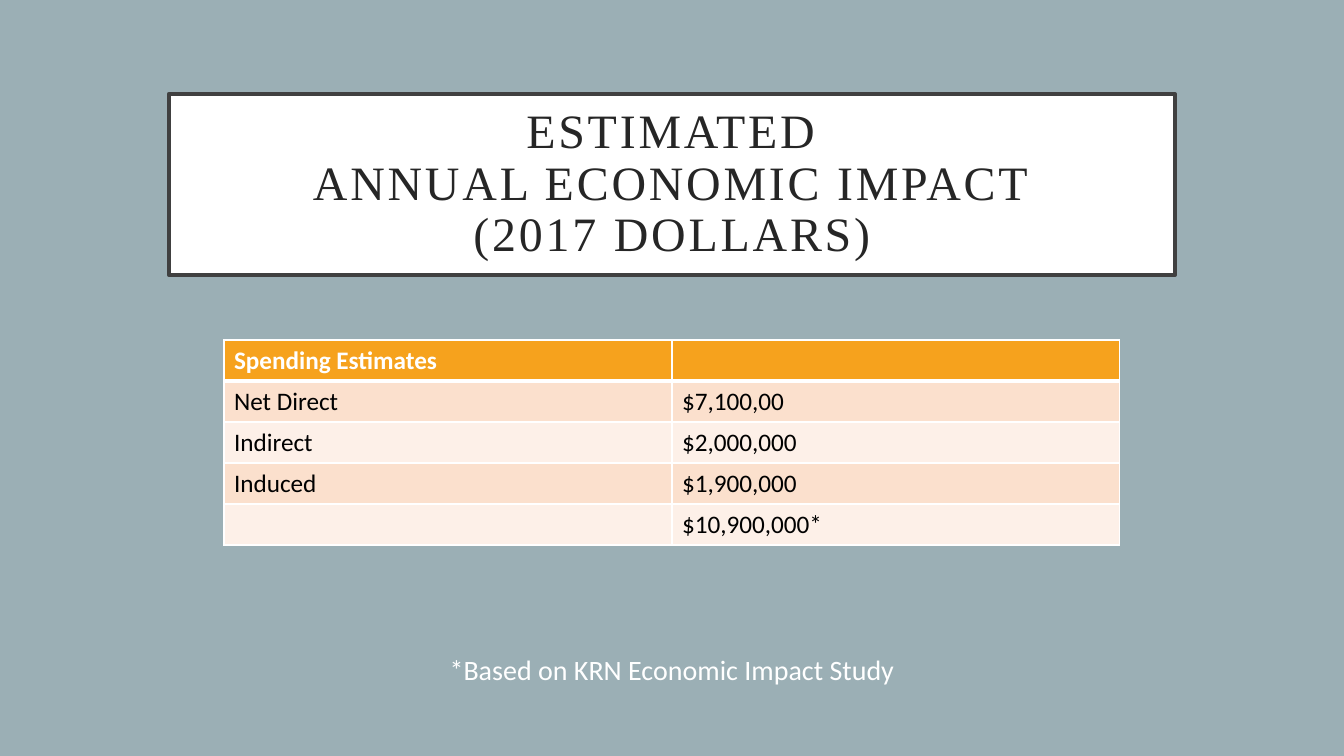
from lxml import etree
from pptx import Presentation
from pptx.dml.color import RGBColor
from pptx.enum.shapes import MSO_SHAPE as SHAPE
from pptx.enum.text import MSO_ANCHOR as ANCHOR, PP_ALIGN as ALIGN
from pptx.oxml.ns import qn
from pptx.util import Pt

PX = 914400 / 100.8
BACKGROUND = RGBColor(0x9B, 0xAF, 0xB5)
WHITE = RGBColor(0xFF, 0xFF, 0xFF)
BLACK = RGBColor(0x00, 0x00, 0x00)
FRAME = RGBColor(0x40, 0x40, 0x40)
TITLE = RGBColor(0x26, 0x26, 0x26)
ORANGE = RGBColor(0xF6, 0xA2, 0x1D)
PEACH = RGBColor(0xFB, 0xE0, 0xCD)
CREAM = RGBColor(0xFD, 0xF0, 0xE8)


def px(*values):
    return [round(v * PX) for v in values]


def write(tf, text, size=18, font="Calibri", color=BLACK, bold=False,
          align=ALIGN.LEFT, spacing=None, before=None, tracking=0):
    p = tf.paragraphs[0]
    p.alignment, p.line_spacing, p.space_before = align, spacing, before
    for i, line in enumerate(text.split("\n")):
        if i:
            p.add_line_break()
        r = p.add_run()
        r.text = line
        r.font.size, r.font.name, r.font.bold = Pt(size), font, bold
        r.font.color.rgb = color
        if tracking:
            r.font._element.set("spc", str(tracking * 100))


prs = Presentation()
prs.slide_width, prs.slide_height = px(1344, 756)
s = prs.slides.add_slide(prs.slide_layouts[6])
s.background.fill.solid()
s.background.fill.fore_color.rgb = BACKGROUND

sp = s.shapes.add_shape(SHAPE.RECTANGLE, *px(169, 94, 1006, 181))
sp.shadow.inherit = False
sp.fill.solid()
sp.fill.fore_color.rgb = WHITE
sp.line.color.rgb = FRAME
sp.line.width = Pt(3)
tf = sp.text_frame
tf.word_wrap = True
tf.vertical_anchor = ANCHOR.MIDDLE
tf.margin_left, tf.margin_top, tf.margin_right, tf.margin_bottom = px(30, 20, 30, 20)
write(tf, "ESTIMATED\nANNUAL ECONOMIC IMPACT\n(2017 DOLLARS)", size=34.2,
      font="Times New Roman", color=TITLE, align=ALIGN.CENTER, spacing=0.9, tracking=2)

tf = s.shapes.add_textbox(*px(169, 648, 1006, 53)).text_frame
tf.word_wrap = True
write(tf, "*Based on KRN Economic Impact Study", size=20, color=WHITE,
      align=ALIGN.CENTER, before=Pt(10))

rows = [
    ("Spending Estimates", ""),
    ("Net Direct", "$7,100,00"),
    ("Indirect", "$2,000,000"),
    ("Induced", "$1,900,000"),
    ("", "$10,900,000*"),
]
table = s.shapes.add_table(len(rows), 2, *px(224, 340, 896, 205)).table
for i, row in enumerate(rows):
    for j, text in enumerate(row):
        cell = table.cell(i, j)
        if text:
            write(cell.text_frame, text, color=BLACK if i else WHITE, bold=i == 0)
        tcPr = cell._tc.get_or_add_tcPr()
        for side in ("L", "R", "T", "B"):
            thick = (i, side) in ((0, "B"), (1, "T"))
            ln = etree.SubElement(tcPr, qn(f"a:ln{side}"), w=str(Pt(3 if thick else 1)))
            fill = etree.SubElement(ln, qn("a:solidFill"))
            etree.SubElement(fill, qn("a:srgbClr"), val=str(WHITE))
        cell.fill.solid()
        cell.fill.fore_color.rgb = (PEACH if i % 2 else CREAM) if i else ORANGE

prs.save("out.pptx")
